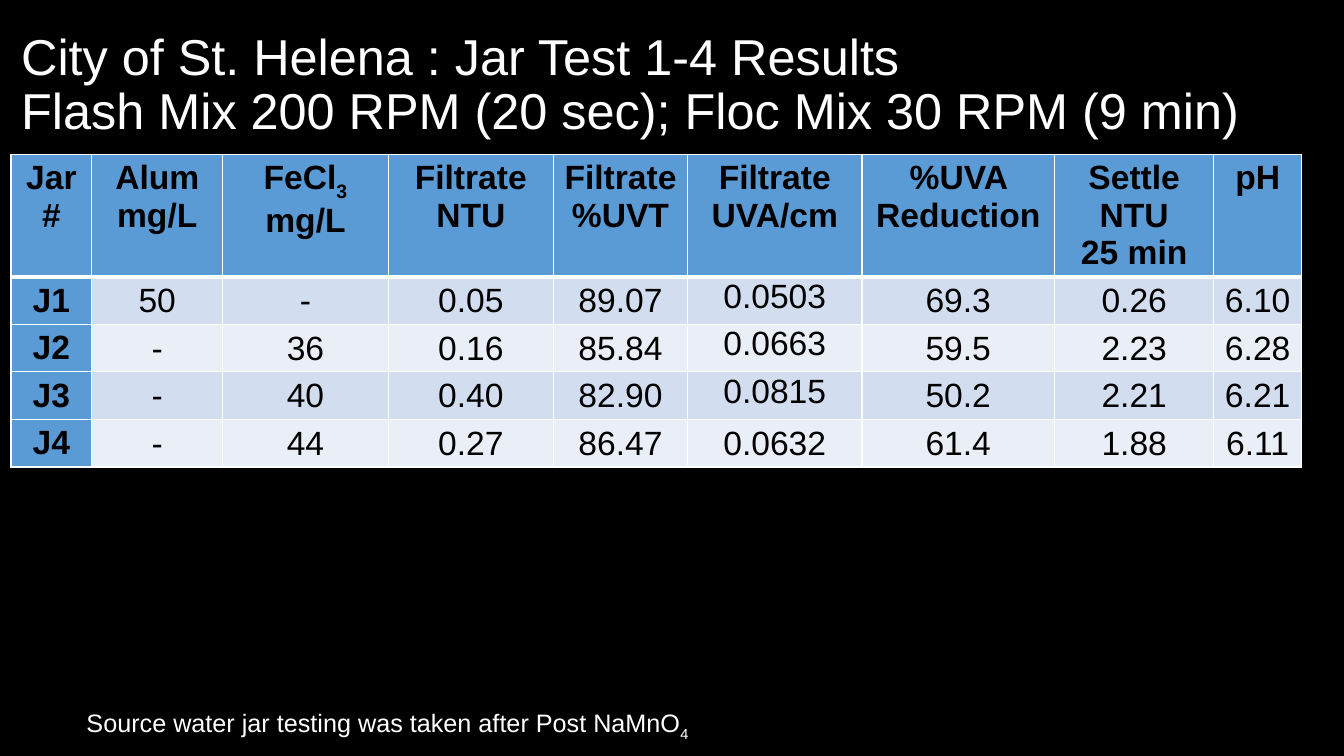
"""Build the jar test results slide."""
from lxml.etree import SubElement
from pptx import Presentation
from pptx.dml.color import RGBColor
from pptx.enum.text import MSO_ANCHOR, MSO_AUTO_SIZE, PP_ALIGN
from pptx.oxml.ns import qn
from pptx.util import Inches, Pt

BLACK = RGBColor(0x00, 0x00, 0x00)
WHITE = RGBColor(0xFF, 0xFF, 0xFF)
BLUE = RGBColor(0x5B, 0x9B, 0xD5)
BANDS = RGBColor(0xD2, 0xDE, 0xEF), RGBColor(0xEA, 0xEF, 0xF7)

TITLE = (
    "City of St. Helena : Jar Test 1-4 Results\v"
    "Flash Mix 200 RPM (20 sec); Floc Mix 30 RPM (9 min)"
)
NOTE = "Source water jar testing was taken after Post NaMnO_4"
COLUMN_WIDTHS = [0.8, 1.3, 1.64, 1.64, 1.33, 1.73, 1.91, 1.58, 0.87]
HEADER_HEIGHT, ROW_HEIGHT = 1.21, 0.47
UVA_COLUMN = 5
RESULTS = [
    ["Jar\n#", "Alum\nmg/L", "FeCl_3\nmg/L", "Filtrate\nNTU", "Filtrate\n%UVT",
     "Filtrate\nUVA/cm", "%UVA Reduction", "Settle\nNTU\n25 min", "pH"],
    ["J1", "50", "-", "0.05", "89.07", "0.0503", "69.3", "0.26", "6.10"],
    ["J2", "-", "36", "0.16", "85.84", "0.0663", "59.5", "2.23", "6.28"],
    ["J3", "-", "40", "0.40", "82.90", "0.0815", "50.2", "2.21", "6.21"],
    ["J4", "-", "44", "0.27", "86.47", "0.0632", "61.4", "1.88", "6.11"],
]


class SlideBuilder:
    """Hold the font and the current slide, and add its elements."""

    def __init__(self, page, font_name):
        self.page = page
        self.font_name = font_name
        page.background.fill.solid()
        page.background.fill.fore_color.rgb = BLACK

    def style(self, para, size, color, bold=False):
        """Format the font of a whole paragraph."""
        para.font.name = self.font_name
        para.font.size = Pt(size)
        para.font.bold = bold
        para.font.color.rgb = color

    def fill_text(self, frame, text, size, color, bold=False, align=PP_ALIGN.LEFT):
        """Set lines of text, lowering the part after an underscore."""
        for index, line in enumerate(text.split("\n")):
            para = frame.add_paragraph() if index else frame.paragraphs[0]
            para.alignment = align
            self.style(para, size, color, bold)
            base, _, subscript = line.partition("_")
            para.add_run().text = base
            if subscript:
                span = para.add_run()
                span.text = subscript
                span.font._element.set("baseline", "-25000")

    def title(self, text, left, top, width, height):
        """Place and format the title placeholder."""
        box = self.page.shapes.title
        box.left, box.top = Inches(left), Inches(top)
        box.width, box.height = Inches(width), Inches(height)
        frame = box.text_frame
        frame.text = text
        frame.auto_size = MSO_AUTO_SIZE.NONE
        frame.vertical_anchor = MSO_ANCHOR.MIDDLE
        para = frame.paragraphs[0]
        para.alignment = PP_ALIGN.LEFT
        para.line_spacing = 0.9
        self.style(para, 36, WHITE)

    def note(self, text, left, top, width, height):
        """Add a single-line text box."""
        box = self.page.shapes.add_textbox(
            Inches(left), Inches(top), Inches(width), Inches(height))
        box.text_frame.word_wrap = False
        self.fill_text(box.text_frame, text, 18, WHITE)

    def borders(self, cell, row):
        """Draw white cell borders, thicker under the header."""
        widths = {"L": 1, "R": 1, "T": 3 if row == 1 else 1, "B": 3 if row == 0 else 1}
        properties = cell._tc.get_or_add_tcPr()
        for side, width in widths.items():
            line = SubElement(properties, qn(f"a:ln{side}"), w=str(Pt(width)))
            fill = SubElement(line, qn("a:solidFill"))
            SubElement(fill, qn("a:srgbClr"), val=str(WHITE))

    def table(self, rows, left, top):
        """Add the results table with a header row and header column."""
        heights = [HEADER_HEIGHT] + [ROW_HEIGHT] * (len(rows) - 1)
        table = self.page.shapes.add_table(
            len(rows), len(COLUMN_WIDTHS), Inches(left), Inches(top),
            Inches(sum(COLUMN_WIDTHS)), Inches(sum(heights))).table
        for column, width in zip(table.columns, COLUMN_WIDTHS):
            column.width = Inches(width)
        for row, (values, height) in enumerate(zip(rows, heights)):
            table.rows[row].height = Inches(height)
            for column, value in enumerate(values):
                cell = table.cell(row, column)
                heading = row == 0 or column == 0
                self.borders(cell, row)
                cell.fill.solid()
                cell.fill.fore_color.rgb = BLUE if heading else BANDS[(row - 1) % 2]
                self.fill_text(cell.text_frame, value, 24, BLACK, heading, PP_ALIGN.CENTER)
                if not heading:
                    cell.margin_left = cell.margin_right = cell.margin_top = Inches(0.01)
                    cell.margin_bottom = 0
                    raised = column == UVA_COLUMN and row < len(rows) - 1
                    cell.vertical_anchor = MSO_ANCHOR.TOP if raised else MSO_ANCHOR.MIDDLE


def main():
    """Build and save the deck."""
    deck = Presentation()
    deck.slide_width, deck.slide_height = Inches(13.33), Inches(7.5)
    builder = SlideBuilder(deck.slides.add_slide(deck.slide_layouts[5]), "Arial")
    builder.title(TITLE, 0.11, 0.13, 12.8, 1.45)
    builder.table(RESULTS, 0.11, 1.53)
    builder.note(NOTE, 0.76, 6.97, 6.24, 0.4)
    deck.save("out.pptx")


if __name__ == "__main__":
    main()
